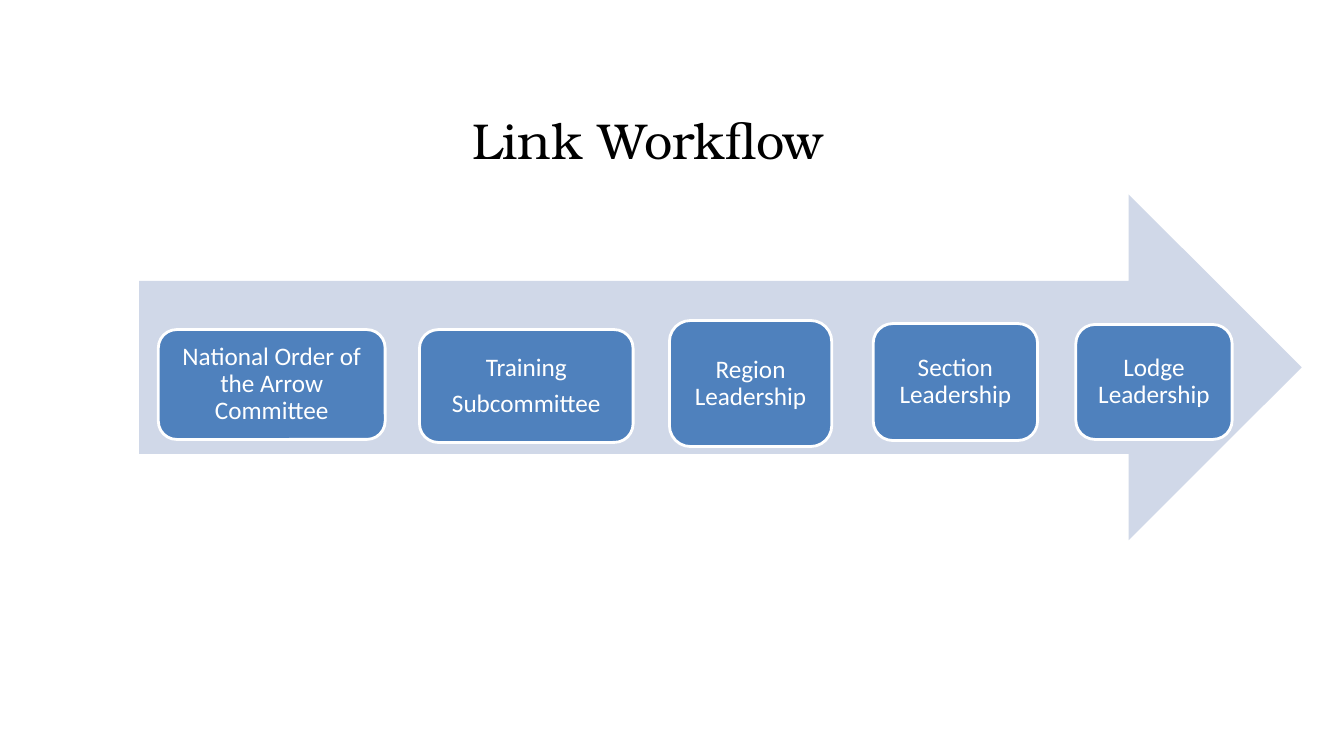
from pptx import Presentation
from pptx.dml.color import RGBColor
from pptx.enum.shapes import MSO_SHAPE as SHAPE
from pptx.enum.text import MSO_ANCHOR as ANCHOR, PP_ALIGN as ALIGN
from pptx.util import Inches, Pt

BLACK = RGBColor(0x00, 0x00, 0x00)
WHITE = RGBColor(0xFF, 0xFF, 0xFF)
BLUE = RGBColor(0x4F, 0x81, 0xBD)
PALE_BLUE = RGBColor(0xD0, 0xD8, 0xE8)

SLIDE_W, SLIDE_H = Inches(13.33), Inches(7.5)

# Left, top, width and height are percentages of the slide's size.
TITLE_AREA = (5.55, 12.53, 85.3, 11.87)
ARROW_AREA = (10.35, 25.73, 86.5, 45.73)
STEPS = [
    (["National Order of the Arrow Committee"], (11.78, 43.6, 16.88, 14.53)),
    (["Training", "Subcommittee"], (31.21, 43.6, 15.9, 14.93)),
    (["Region Leadership"], (49.81, 42.4, 12.08, 16.67)),
    (["Section Leadership"], (64.97, 42.8, 12.23, 15.47)),
    (["Lodge Leadership"], (80.05, 42.93, 11.63, 15.2)),
]


def to_lengths(area):
    sides = (SLIDE_W, SLIDE_H, SLIDE_W, SLIDE_H)
    return [int(side * share / 100) for side, share in zip(sides, area)]


def add_run(p, text, font, size, color):
    p.alignment = ALIGN.CENTER
    r = p.add_run()
    r.text = text
    r.font.name = font
    r.font.size = Pt(size)
    r.font.color.rgb = color


def set_title(s, text):
    sp = s.shapes.title
    sp.left, sp.top, sp.width, sp.height = to_lengths(TITLE_AREA)
    tf = sp.text_frame
    tf.vertical_anchor = ANCHOR.MIDDLE
    add_run(tf.paragraphs[0], text, "TeX Gyre Bonum", 36, BLACK)


def add_filled_shape(s, kind, area, fill):
    sp = s.shapes.add_shape(kind, *to_lengths(area))
    sp.shadow.inherit = False
    sp.fill.solid()
    sp.fill.fore_color.rgb = fill
    sp.line.fill.background()
    return sp


def add_step(s, lines, area):
    sp = add_filled_shape(s, SHAPE.ROUNDED_RECTANGLE, area, BLUE)
    sp.line.color.rgb = WHITE
    sp.line.width = Pt(2)
    tf = sp.text_frame
    tf.word_wrap = True
    tf.vertical_anchor = ANCHOR.MIDDLE
    tf.margin_left = tf.margin_right = Inches(0.07)
    tf.margin_top = tf.margin_bottom = Inches(0.07)
    for i, line in enumerate(lines):
        p = tf.add_paragraph() if i else tf.paragraphs[0]
        p.line_spacing = 0.9
        p.space_after = Pt(6.3)
        add_run(p, line, "Calibri", 18, WHITE)


def main():
    prs = Presentation()
    prs.slide_width, prs.slide_height = SLIDE_W, SLIDE_H
    s = prs.slides.add_slide(prs.slide_layouts[5])
    set_title(s, "Link Workflow")
    add_filled_shape(s, SHAPE.RIGHT_ARROW, ARROW_AREA, PALE_BLUE)
    for lines, area in STEPS:
        add_step(s, lines, area)
    prs.save("out.pptx")


if __name__ == "__main__":
    main()
